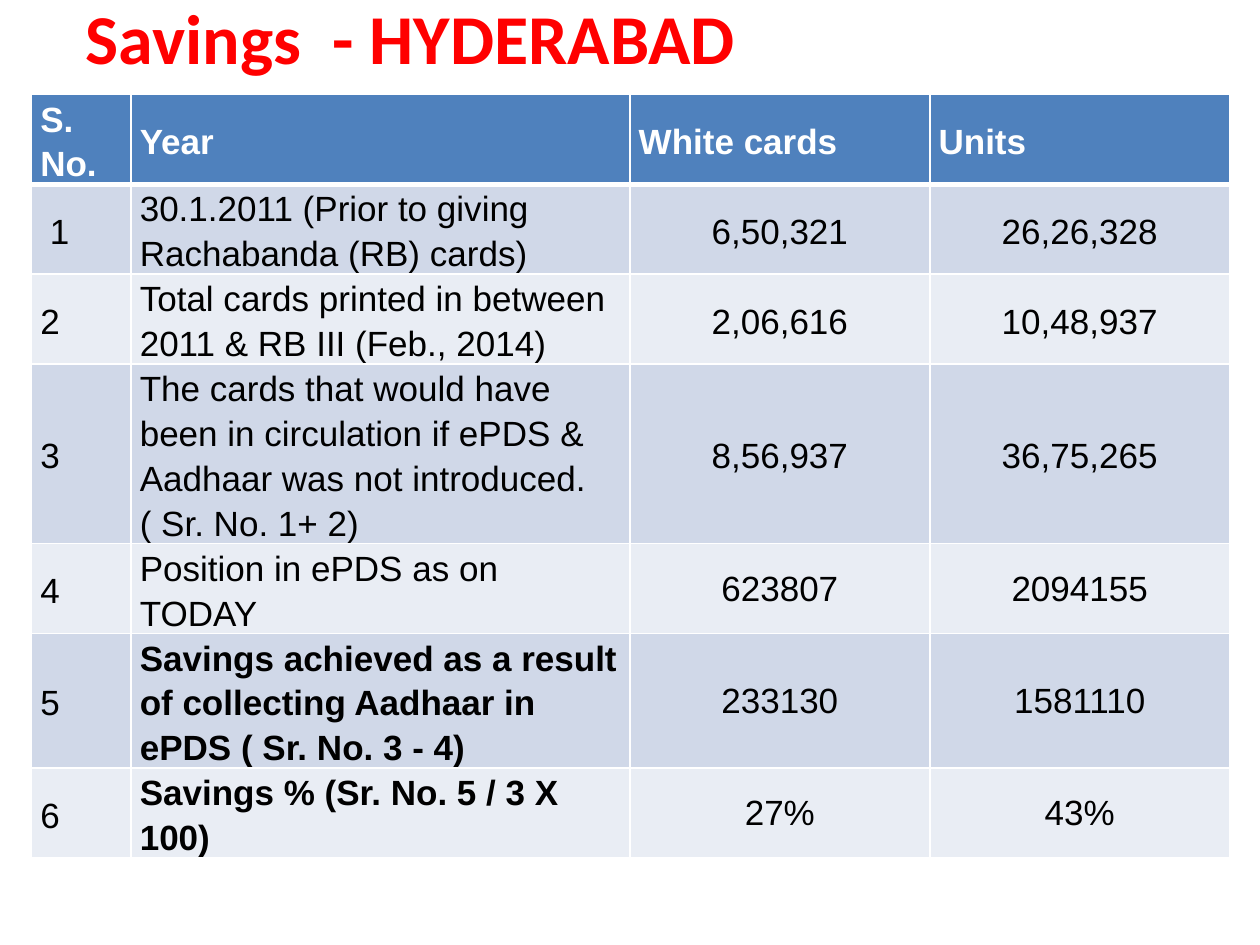
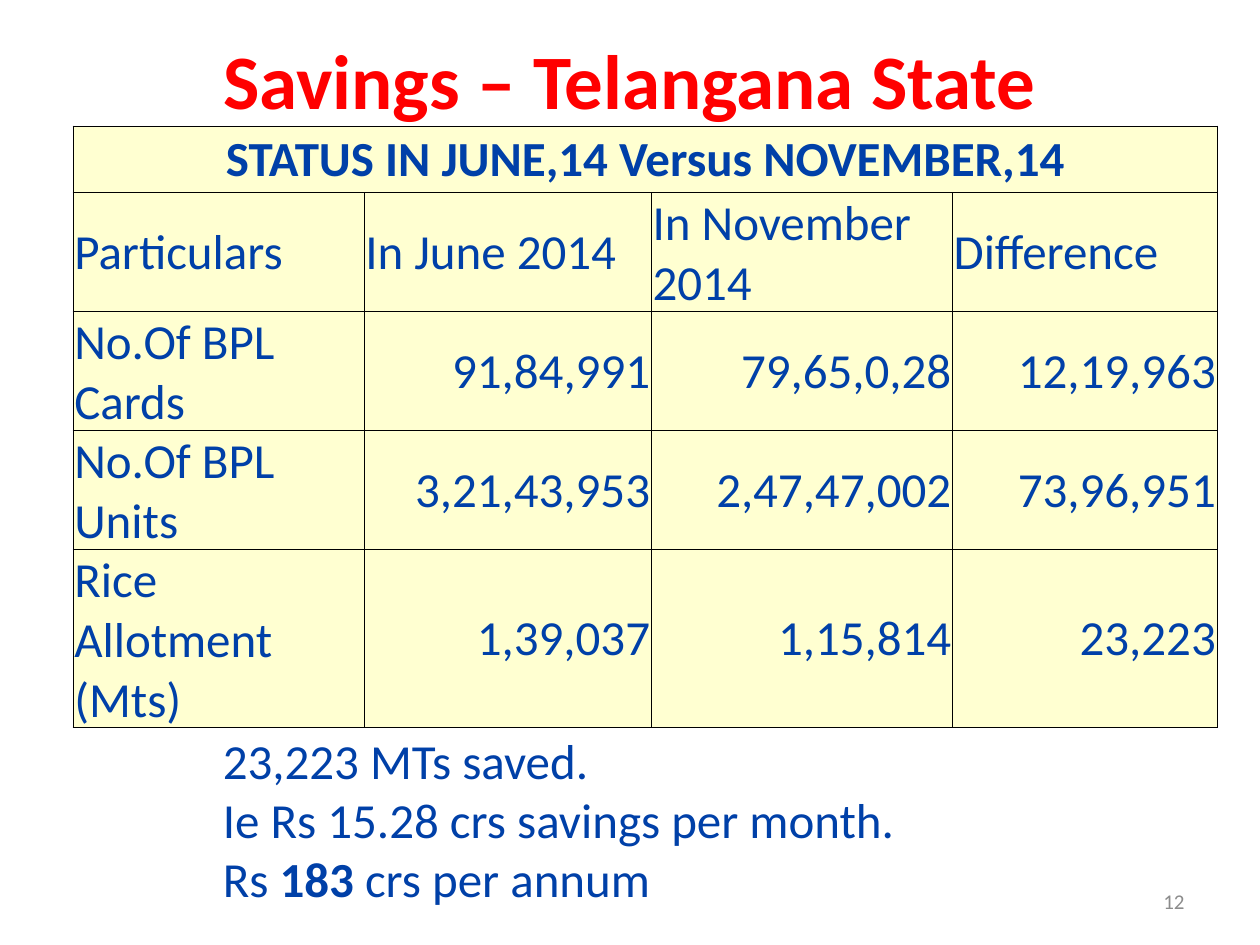
from typing import Any, NamedTuple, Optional

from lxml import etree
from pptx import Presentation
from pptx.dml.color import RGBColor
from pptx.enum.text import MSO_ANCHOR, MSO_AUTO_SIZE, PP_ALIGN
from pptx.oxml.ns import qn
from pptx.util import Emu, Pt

LEFT, MID, RIGHT = PP_ALIGN.LEFT, PP_ALIGN.CENTER, PP_ALIGN.RIGHT
JUST = PP_ALIGN.JUSTIFY
CENTRE = MSO_ANCHOR.MIDDLE
GROW = MSO_AUTO_SIZE.SHAPE_TO_FIT_TEXT

SCALE = 9144
WHITE, BLACK, RED, NAVY = "FFFFFF", "000000", "FF0000", "0040A8"
BLUE, BAND, PALE, CREAM, GREY = "4F81BD", "D0D8E8", "E9EDF4", "FFFF99", "8C8C8C"
SIDES = ("L", "R", "T", "B")


class Box(NamedTuple):
    left: int
    top: int
    width: int
    height: int


class Font(NamedTuple):
    name: str
    size: int
    color: str
    bold: bool = False


class Look(NamedTuple):
    font: Font
    fill: str
    line: str
    widths: tuple[float, ...]
    align: Any = LEFT
    inset: tuple[int, ...] = (1, 1, 1, 0)
    space: Optional[float] = None
    alpha: Optional[int] = None


class Grid(NamedTuple):
    box: Box
    cols: tuple[int, ...]
    row: int
    cells: list[list[str]]


SAVED = Grid(
    Box(25, 75, 951, 652), (79, 396, 238, 238), 41,
    [
        ["S. No.", "Year", "White cards", "Units"],
        [" 1", "30.1.2011 (Prior to giving Rachabanda (RB) cards)", "6,50,321", "26,26,328"],
        ["2", "Total cards printed in between 2011 & RB III (Feb., 2014)", "2,06,616", "10,48,937"],
        ["3", "The cards that would have been in circulation if ePDS & Aadhaar was not introduced. "
              "( Sr. No. 1+ 2)", "8,56,937", "36,75,265"],
        ["4", "Position in ePDS as on TODAY", "623807", "2094155"],
        ["5", "Savings achieved as a result of collecting Aadhaar in ePDS ( Sr. No. 3 - 4)",
         "233130", "1581110"],
        ["6", "Savings % (Sr. No. 5 / 3 X 100)", "27%", "43%"],
    ],
)
STATUS = Grid(
    Box(58, 100, 908, 475), (231, 228, 239, 210), 53,
    [
        ["STATUS IN JUNE,14 Versus NOVEMBER,14", "", "", ""],
        ["Particulars", "In June 2014", "In November 2014", "Difference"],
        ["No.Of BPL Cards", "91,84,991", "79,65,0,28", "12,19,963"],
        ["No.Of BPL Units", "3,21,43,953", "2,47,47,002", "73,96,951"],
        ["Rice Allotment (Mts)", "1,39,037", "1,15,814", "23,223"],
    ],
)
NOTES = [
    [("23,223 MTs saved.", False)],
    [("Ie Rs 15.28 crs savings per month.", False)],
    [("Rs ", False), ("183 ", True), ("crs per annum", False)],
]


def px(count: int) -> Emu:
    return Emu(count * SCALE)


def tint(code: str) -> RGBColor:
    return RGBColor.from_string(code)


def apply(item: Any, values: dict[str, Any]) -> None:
    for name, value in values.items():
        setattr(item, name, value)


def place(item: Any, box: Box) -> None:
    apply(item, {name: px(value) for name, value in box._asdict().items()})


def write(para: Any, text: str, font: Font) -> None:
    run = para.add_run()
    run.text = text
    apply(run.font, {"name": font.name, "size": Pt(font.size), "bold": font.bold})
    run.font.color.rgb = tint(font.color)


def head(slide: Any, text: str, box: Box, size: int, align: Any) -> None:
    title = slide.shapes.title
    place(title, box)
    title.text_frame.vertical_anchor = CENTRE
    para = title.text_frame.paragraphs[0]
    para.alignment = align
    write(para, text, Font("Calibri", size, RED, True))


def edge(cell: Any, look: Look) -> None:
    props = cell._tc.get_or_add_tcPr()
    for side, width in zip(SIDES, look.widths):
        line = etree.SubElement(props, qn(f"a:ln{side}"), w=str(Pt(width)))
        fill = etree.SubElement(line, qn("a:solidFill"))
        etree.SubElement(fill, qn("a:srgbClr"), val=look.line)


def dress(cell: Any, text: str, look: Look) -> None:
    edge(cell, look)
    cell.fill.solid()
    cell.fill.fore_color.rgb = tint(look.fill)
    if look.alpha is not None:
        color = cell._tc.tcPr.find(qn("a:solidFill")).find(qn("a:srgbClr"))
        etree.SubElement(color, qn("a:alpha"), val=str(look.alpha * 1000))
    names = ("margin_left", "margin_top", "margin_right", "margin_bottom")
    apply(cell, dict(zip(names, map(px, look.inset))))
    cell.vertical_anchor = CENTRE
    para = cell.text_frame.paragraphs[0]
    apply(para, {"alignment": look.align, "line_spacing": look.space})
    if text:
        write(para, text, look.font)


def saved_look(row: int, col: int) -> Look:
    top = row == 0
    plain = row > 3 and col > 1
    bold = top or (row > 4 and col == 1)
    return Look(
        Font("Arial", 20, WHITE if top else BLACK, bold),
        BLUE if top else BAND if row % 2 else PALE,
        WHITE,
        (1, 1, 3 if row == 1 else 1, 3 if top else 1),
        MID if row and col > 1 else LEFT,
        (1, 1, 1, 0) if plain else (7, 0, 7, 0),
        None if plain else 1.15,
    )


def status_look(row: int, col: int) -> Look:
    align = MID if row == 0 else RIGHT if row > 1 and col else LEFT
    font = Font("Calibri", 28, NAVY, row == 0)
    return Look(font, CREAM, BLACK, (0.5,) * 4, align, alpha=45)


def draw(slide: Any, grid: Grid, style: Any) -> Any:
    frame = slide.shapes.add_table(len(grid.cells), len(grid.cols), *map(px, grid.box))
    table = frame.table
    apply(table, {"first_row": False, "horz_banding": False})
    for col, width in zip(table.columns, grid.cols):
        col.width = px(width)
    for row in table.rows:
        row.height = px(grid.row)
    for r, line in enumerate(grid.cells):
        for c, text in enumerate(line):
            dress(table.cell(r, c), text, style(r, c))
    place(frame, grid.box)
    return table


def note(slide: Any) -> None:
    frame = slide.shapes.add_textbox(*map(px, Box(167, 575, 569, 151))).text_frame
    apply(frame, {"word_wrap": False, "auto_size": GROW})
    for i, line in enumerate(NOTES):
        para = frame.add_paragraph() if i else frame.paragraphs[0]
        for text, bold in line:
            write(para, text, Font("Calibri", 28, NAVY, bold))


def count(slide: Any, text: str) -> None:
    frame = slide.shapes.add_textbox(*map(px, Box(717, 695, 233, 40))).text_frame
    apply(frame, {"word_wrap": True, "vertical_anchor": CENTRE})
    para = frame.paragraphs[0]
    para.alignment = RIGHT
    write(para, text, Font("Calibri", 12, GREY))


def main() -> None:
    deck = Presentation()
    apply(deck, {"slide_width": px(1000), "slide_height": px(750)})
    layout = deck.slide_layouts.get_by_name("Title Only")

    city = deck.slides.add_slide(layout)
    head(city, "Savings  - HYDERABAD", Box(58, -25, 900, 108), 40, JUST)
    draw(city, SAVED, saved_look)

    state = deck.slides.add_slide(layout)
    head(state, "Savings – Telangana State", Box(50, 0, 900, 125), 44, MID)
    count(state, "12")
    table = draw(state, STATUS, status_look)
    table.cell(0, 0).merge(table.cell(0, 3))
    note(state)

    deck.save("out.pptx")


if __name__ == "__main__":
    main()
